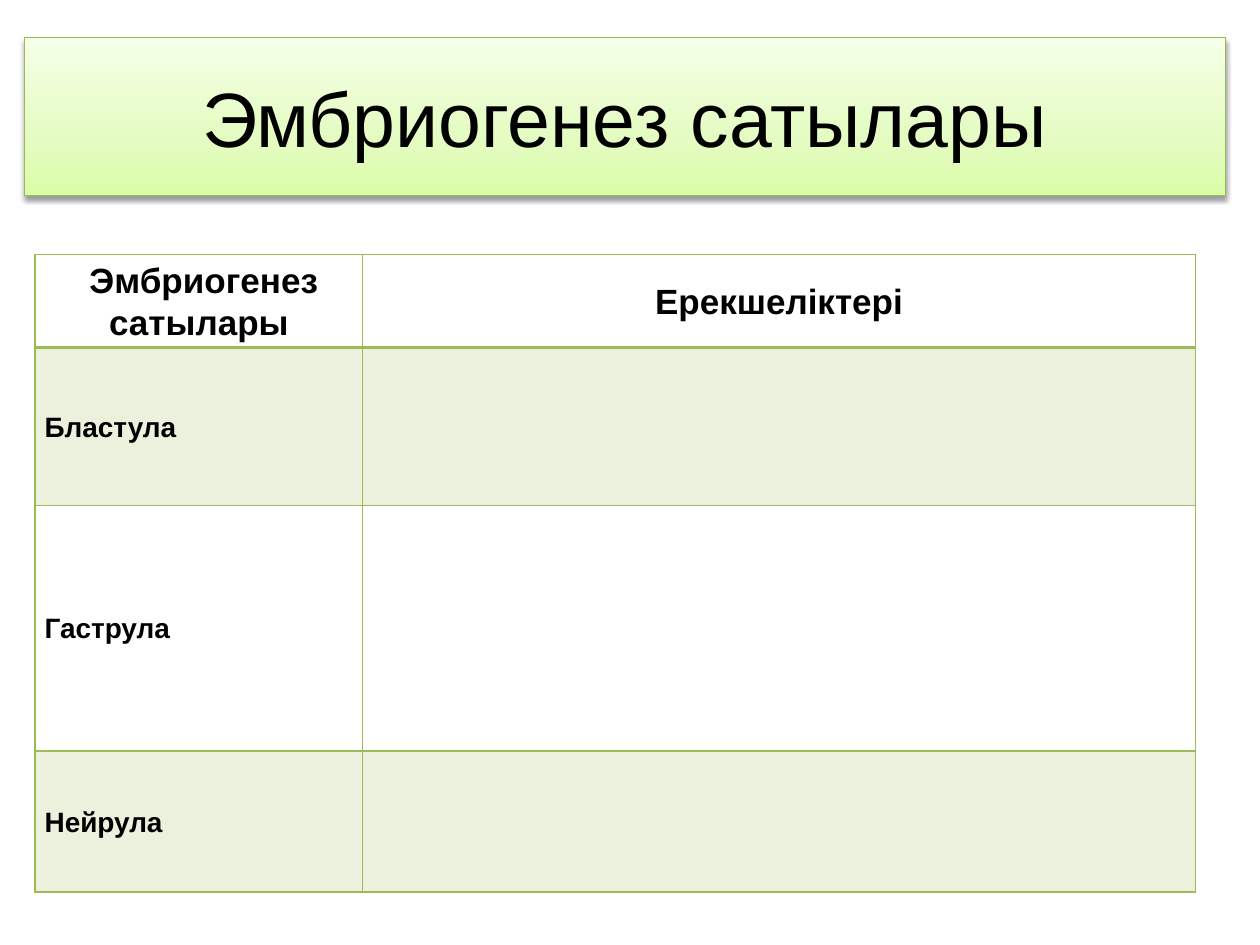
from lxml import etree
from pptx import Presentation
from pptx import util as u
from pptx.dml.color import RGBColor
from pptx.enum import text
from pptx.oxml import parse_xml
from pptx.oxml.ns import nsdecls, qn

COLORS = {
    "text": "000000",
    "outline": "98B955",
    "accent": "9BBB59",
    "shadow": "000000",
}
TITLE_STOPS = [(0, "DAFDA7"), (35, "E4FCC2"), (100, "F5FFE7")]
FONT = "Arial"
HEADERS = ["\N{NO-BREAK SPACE}Эмбриогенез сатылары", "Ерекшеліктері"]
STAGES = ["Бластула", "Гаструла", "Нейрула"]


def add_run(p, words, size, bold=False):
    """Add one formatted run to a paragraph."""
    r = p.add_run()
    r.text = words
    r.font.name = FONT
    r.font.size = u.Pt(size)
    r.font.bold = bold
    r.font.color.rgb = RGBColor.from_string(COLORS["text"])


def title_band(s, left, top, width, height):
    """Place the title as a gradient band with a soft shadow."""
    sp = s.shapes.title
    sp.left, sp.top, sp.width, sp.height = left, top, width, height
    stops = "".join(
        f'<a:gs pos="{pos * 1000}"><a:srgbClr val="{color}"/></a:gs>'
        for pos, color in TITLE_STOPS
    )
    sp_pr = sp._element.spPr
    sp_pr.append(parse_xml(
        f'<a:gradFill {nsdecls("a")} rotWithShape="1"><a:gsLst>{stops}</a:gsLst>'
        '<a:lin ang="16200000" scaled="1"/></a:gradFill>'
    ))
    sp.line.color.rgb = RGBColor.from_string(COLORS["outline"])
    sp.line.width = u.Pt(0.75)
    sp_pr.append(parse_xml(
        f'<a:effectLst {nsdecls("a")}><a:outerShdw blurRad="{u.Pt(3.1)}" '
        f'dist="{u.Pt(1.6)}" dir="5400000" rotWithShape="0">'
        f'<a:srgbClr val="{COLORS["shadow"]}"><a:alpha val="38000"/></a:srgbClr>'
        '</a:outerShdw></a:effectLst>'
    ))
    tf = sp.text_frame
    tf.word_wrap = True
    tf.vertical_anchor = text.MSO_ANCHOR.MIDDLE
    p = tf.paragraphs[0]
    p.alignment = text.PP_ALIGN.CENTER
    add_run(p, "Эмбриогенез сатылары", 44)


def set_borders(cell, widths):
    """Draw the cell borders, given their widths in points by side."""
    tc_pr = cell._tc.get_or_add_tcPr()
    for side, width in widths.items():
        tc_pr.append(parse_xml(
            f'<a:ln{side} {nsdecls("a")} w="{u.Pt(width)}"><a:solidFill>'
            f'<a:srgbClr val="{COLORS["accent"]}"/></a:solidFill></a:ln{side}>'
        ))


def fill_cell(cell, shaded):
    """Tint a shaded cell and leave any other without fill."""
    if not shaded:
        cell.fill.background()
        return
    cell.fill.solid()
    cell.fill.fore_color.rgb = RGBColor.from_string(COLORS["accent"])
    color = cell._tc.tcPr.find(".//" + qn("a:solidFill") + "[last()]")
    color = cell._tc.tcPr.findall(qn("a:solidFill"))[0][0]
    etree.SubElement(color, qn("a:alpha"), val="20000")


def write_cell(cell, words, size, alignment):
    """Write bold text in a cell with narrow margins."""
    cell.margin_left = cell.margin_right = u.Cm(0.19)
    cell.margin_top = cell.margin_bottom = 0
    cell.vertical_anchor = text.MSO_ANCHOR.MIDDLE
    p = cell.text_frame.paragraphs[0]
    p.alignment = alignment
    p.line_spacing = 1.07
    add_run(p, words, size, bold=True)


def stage_table(s, left, top, width, height):
    """Place the table of stages, with an empty column to fill in."""
    rows = [HEADERS] + [[stage, ""] for stage in STAGES]
    table = s.shapes.add_table(len(rows), 2, left, top, width, height).table
    table.first_row = table.horz_banding = False
    table.columns[0].width = u.Cm(6.6)
    table.columns[1].width = width - u.Cm(6.6)
    for row, row_height in zip(table.rows, (1.88, 3.18, 4.95, 2.84)):
        row.height = u.Cm(row_height)
    for i, row in enumerate(rows):
        header = i == 0
        size = 20 if header else 16
        alignment = text.PP_ALIGN.CENTER if header else text.PP_ALIGN.JUSTIFY
        widths = {"L": 1, "R": 1, "T": 2 if i == 1 else 1, "B": 2 if header else 1}
        for j, words in enumerate(row):
            cell = table.cell(i, j)
            set_borders(cell, widths)
            fill_cell(cell, shaded=i % 2 == 1)
            if words:
                write_cell(cell, words, size, alignment)


def main():
    """Build the slide and save it."""
    prs = Presentation()
    prs.slide_width, prs.slide_height = u.Cm(25.4), u.Cm(19.05)
    s = prs.slides.add_slide(prs.slide_layouts[5])
    title_band(s, u.Cm(0.5), u.Cm(0.76), u.Cm(24.2), u.Cm(3.18))
    stage_table(s, u.Cm(0.71), u.Cm(5.13), u.Cm(23.39), u.Cm(12.85))
    prs.save("out.pptx")


if __name__ == "__main__":
    main()
